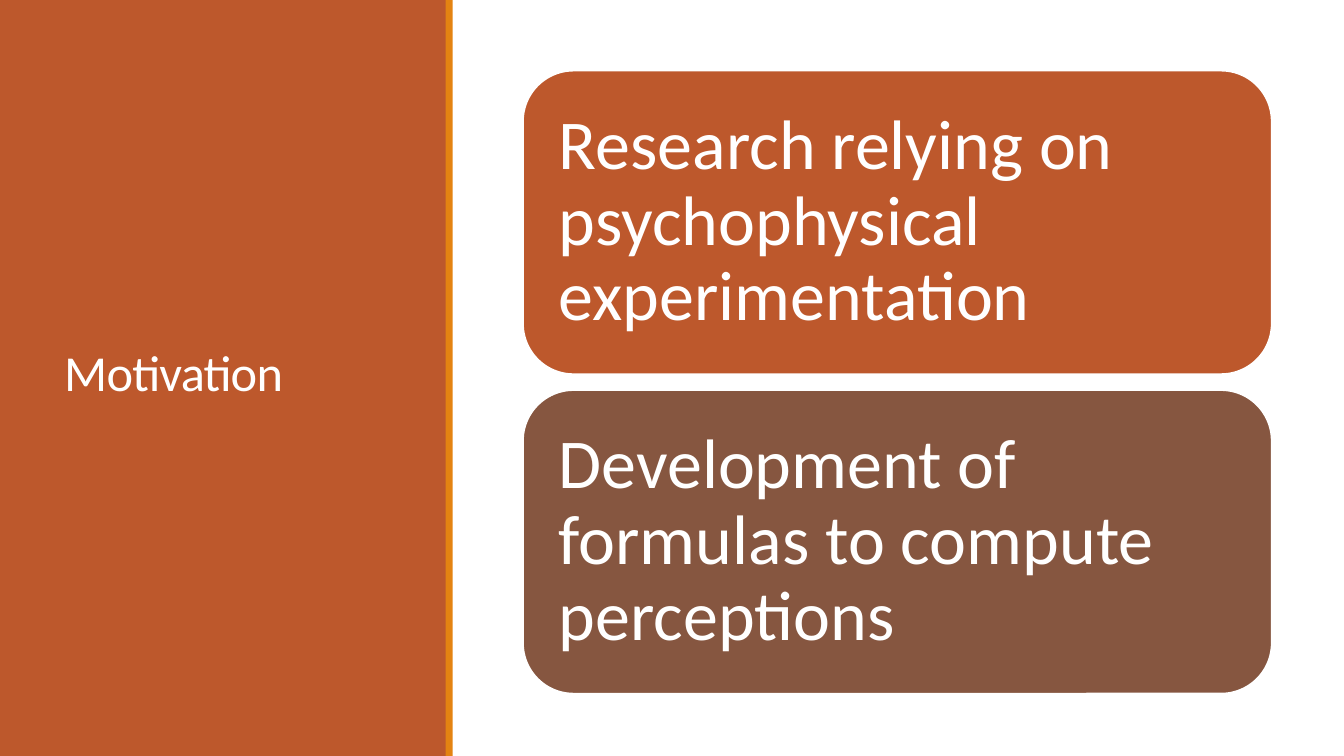
from dataclasses import dataclass

from pptx import Presentation
from pptx.dml.color import RGBColor
from pptx.enum.shapes import MSO_SHAPE
from pptx.enum.text import MSO_ANCHOR, PP_ALIGN
from pptx.util import Cm, Pt

RECTANGLE = MSO_SHAPE.RECTANGLE
ROUNDED = MSO_SHAPE.ROUNDED_RECTANGLE
MIDDLE = MSO_ANCHOR.MIDDLE
LEFT = PP_ALIGN.LEFT


@dataclass(frozen=True)
class Theme:
    """Colours, font and type sizes of the slide."""
    rust: RGBColor = RGBColor(0xBD, 0x58, 0x2C)
    orange: RGBColor = RGBColor(0xE4, 0x83, 0x12)
    brown: RGBColor = RGBColor(0x86, 0x56, 0x40)
    white: RGBColor = RGBColor(0xFF, 0xFF, 0xFF)
    font: str = "Calibri"
    heading_size: Pt = Pt(36)
    card_size: Pt = Pt(50)
    card_outline: Pt = Pt(1.25)


THEME = Theme()
SLIDE_WIDTH, SLIDE_HEIGHT = Cm(33.87), Cm(19.05)
CARD_LEFT, CARD_TOP = Cm(13.18), Cm(1.78)
CARD_WIDTH, CARD_HEIGHT = Cm(18.87), Cm(7.65)
CARD_PITCH = Cm(8.05)
CARD_INSET = Cm(0.53)
CARDS = [
    ("Research relying on psychophysical experimentation", THEME.rust),
    ("Development of formulas to compute perceptions", THEME.brown),
]


def add_block(slide, kind, left, top, width, height, colour):
    """Add a flat filled shape without outline."""
    block = slide.shapes.add_shape(kind, left, top, width, height)
    block.shadow.inherit = False
    block.fill.solid()
    block.fill.fore_color.rgb = colour
    block.line.fill.background()
    return block


def write_text(frame, wording, size, line_spacing):
    """Write one white, left-aligned paragraph and return its run."""
    frame.text = wording
    frame.word_wrap = True
    frame.vertical_anchor = MIDDLE
    paragraph = frame.paragraphs[0]
    paragraph.alignment = LEFT
    paragraph.line_spacing = line_spacing
    run = paragraph.runs[0]
    run.font.name = THEME.font
    run.font.size = size
    run.font.color.rgb = THEME.white
    return run


def add_heading(slide, wording):
    """Add the slide heading with slightly tightened letters."""
    heading = slide.shapes.add_textbox(Cm(1.37), Cm(1.45), Cm(8.56), Cm(16.03))
    run = write_text(heading.text_frame, wording, THEME.heading_size, 0.85)
    run._r.get_or_add_rPr().set("spc", "-50")


def add_card(slide, top, wording, colour):
    """Add a rounded card holding one statement."""
    card = add_block(slide, ROUNDED, CARD_LEFT, top, CARD_WIDTH, CARD_HEIGHT, colour)
    card.line.color.rgb = THEME.white
    card.line.width = THEME.card_outline
    frame = card.text_frame
    frame.margin_left = frame.margin_right = CARD_INSET
    frame.margin_top = frame.margin_bottom = CARD_INSET
    write_text(frame, wording, THEME.card_size, 0.9)


def main():
    """Build the motivation slide and save it."""
    deck = Presentation()
    deck.slide_width, deck.slide_height = SLIDE_WIDTH, SLIDE_HEIGHT
    slide = deck.slides.add_slide(deck.slide_layouts[6])
    add_block(slide, RECTANGLE, 0, 0, Cm(11.25), SLIDE_HEIGHT, THEME.rust)
    add_heading(slide, "Motivation")
    add_block(slide, RECTANGLE, Cm(11.23), 0, Cm(0.18), SLIDE_HEIGHT, THEME.orange)
    for position, (wording, colour) in enumerate(CARDS):
        add_card(slide, CARD_TOP + position * CARD_PITCH, wording, colour)
    deck.save("out.pptx")


if __name__ == "__main__":
    main()
